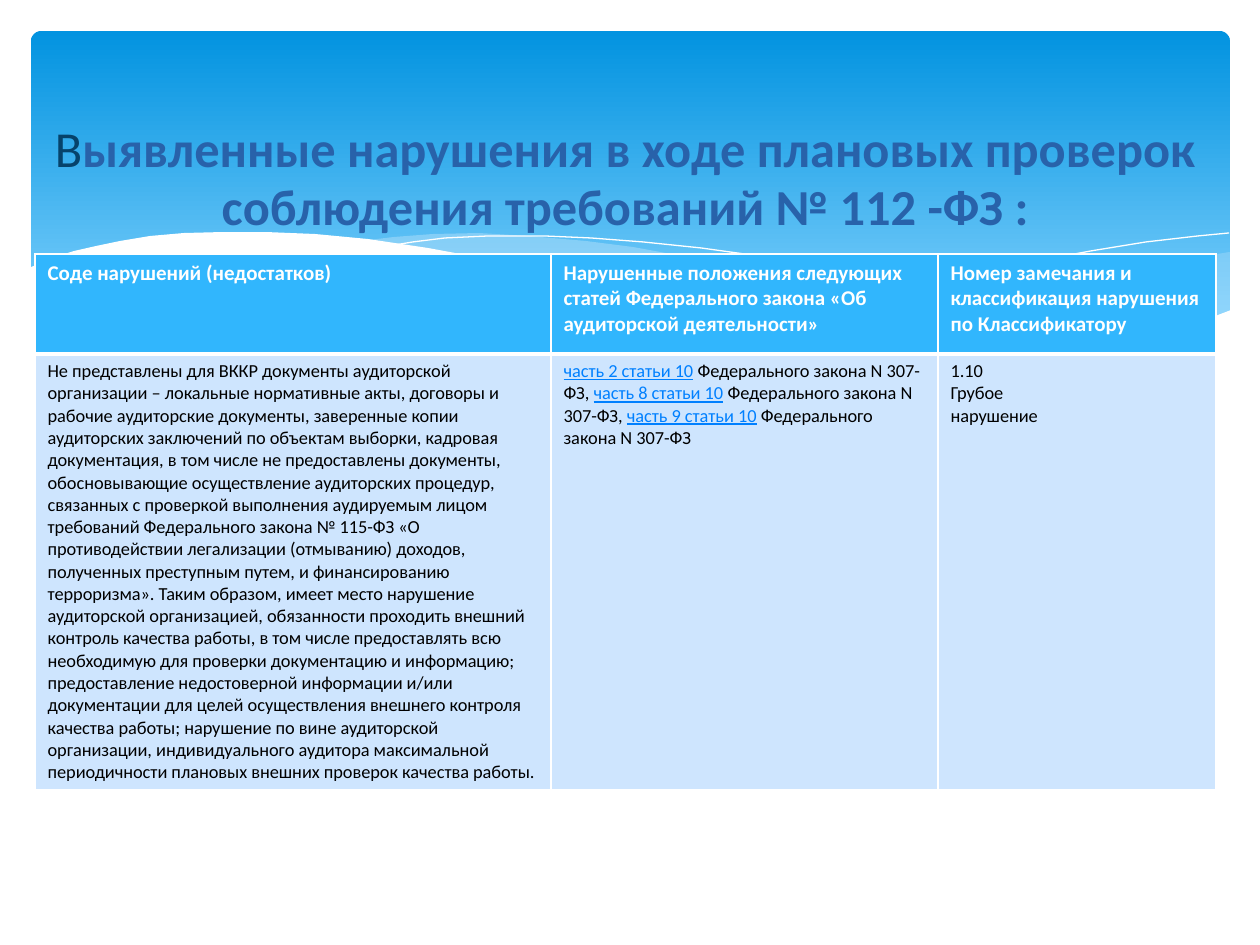
from lxml.etree import SubElement
from pptx import Presentation
from pptx.dml.color import RGBColor
from pptx.enum.shapes import MSO_SHAPE
from pptx.enum.text import MSO_ANCHOR, MSO_AUTO_SIZE, PP_ALIGN
from pptx.oxml import parse_xml
from pptx.oxml.ns import nsdecls, qn
from pptx.util import Emu, Pt

PX = 914400 / 126
COLORS = {
    "sky_top": "0293E0", "sky_bottom": "83D3FE", "wave": "C6E7FC", "white": "FFFFFF",
    "header": "31B6FD", "body": "CEE5FE", "text": "000000", "link": "0080FF",
    "title_initial": "06436B", "title": "2862AA",
}


def px(*lengths):
    """Turn px lengths into EMU."""
    return [Emu(round(length * PX)) for length in lengths]


def write(para, text, size, color="text", bold=False, underline=False):
    """Append a formatted span to a paragraph."""
    span = para.add_run()
    span.text = text
    span.font.name = "Calibri"
    span.font.size = Pt(size)
    span.font.bold = bold
    span.font.underline = underline
    span.font.color.rgb = RGBColor.from_string(COLORS[color])


deck = Presentation()
deck.slide_width, deck.slide_height = px(1260, 945)
page = deck.slides.add_slide(deck.slide_layouts[5])

# Gradient banner
banner = page.shapes.add_shape(MSO_SHAPE.ROUNDED_RECTANGLE, *px(31, 31, 1199, 341))
banner.adjustments[0] = 0.03
banner.shadow.inherit = False
banner.line.fill.background()
banner.fill.gradient()
banner.fill.gradient_angle = 270
for stop, position, color in zip(banner.fill.gradient_stops, (0, 0.9), ("sky_top", "sky_bottom")):
    stop.position = position
    stop.color.rgb = RGBColor.from_string(COLORS[color])

# Waves from back to front: fill colour (None for an open line), opacity in percent, points
waves = [
    ("wave", 29, [
        (1229, 252), (1178, 261), (1123, 272), (1085, 281), (1014, 299), (949, 312),
        (890, 324), (833, 334), (888, 341), (939, 346), (998, 349), (1052, 349),
        (1110, 344), (1160, 334), (1196, 324), (1230, 311), (1230, 252)]),
    ("wave", 40, [
        (1125, 344), (1055, 334), (976, 320), (890, 302), (793, 280), (736, 266),
        (682, 256), (633, 247), (586, 241), (529, 236), (479, 233), (433, 234),
        (394, 237), (360, 241), (407, 247), (456, 256), (509, 266), (566, 280),
        (668, 302), (757, 321), (838, 335), (910, 345), (989, 350), (1056, 350)]),
    (None, 100, [
        (389, 246), (413, 242), (445, 238), (488, 236), (545, 236), (591, 238),
        (643, 242), (701, 248), (766, 257), (838, 268), (916, 284), (1002, 304),
        (1095, 329), (1143, 343)]),
    (None, 100, [
        (772, 324), (823, 310), (876, 296), (942, 281), (1016, 265), (1091, 251),
        (1146, 242), (1198, 236), (1229, 233)]),
    ("white", 100, [
        (1231, 310), (1197, 323), (1159, 334), (1118, 342), (1071, 346), (1019, 349),
        (959, 347), (893, 341), (816, 330), (730, 315), (634, 294), (563, 277),
        (493, 260), (428, 248), (368, 239), (315, 234), (266, 232), (223, 232),
        (184, 233), (150, 236), (120, 241), (96, 246), (74, 251), (58, 256),
        (45, 261), (29, 268), (29, 415), (1231, 415)]),
]
for color, opacity, points in waves:
    builder = page.shapes.build_freeform(*points[0], scale=PX)
    builder.add_line_segments(points[1:], close=color is not None)
    wave = builder.convert_to_shape()
    wave.shadow.inherit = False
    if color is None:
        wave.fill.background()
        wave.line.color.rgb = RGBColor.from_string(COLORS["white"])
        wave.line.width = 0
        continue
    wave.line.fill.background()
    wave.fill.solid()
    wave.fill.fore_color.rgb = RGBColor.from_string(COLORS[color])
    if opacity < 100:
        shade = wave.element.spPr.find(qn("a:solidFill"))[0]
        SubElement(shade, qn("a:alpha")).set("val", str(opacity * 1000))

# Table of violations: each cell is a list of paragraphs, each paragraph a list of (text, colour)
law = " Федерального закона N 307-ФЗ"
missing_documents = (
    "Не представлены для ВККР документы аудиторской организации – локальные нормативные акты, "
    "договоры и рабочие аудиторские документы, заверенные копии аудиторских заключений по "
    "объектам выборки, кадровая документация, в том числе не предоставлены документы, "
    "обосновывающие осуществление аудиторских процедур, связанных с проверкой выполнения "
    "аудируемым лицом требований Федерального закона № 115-ФЗ «О противодействии легализации "
    "(отмыванию) доходов, полученных преступным путем, и финансированию терроризма». "
)
conclusion = (
    "Таким образом, имеет место нарушение аудиторской организацией, обязанности проходить внешний "
    "контроль качества работы, в том числе предоставлять всю необходимую для проверки "
    "документацию и информацию; предоставление недостоверной информации и/или документации для "
    "целей осуществления внешнего контроля качества работы; нарушение по вине аудиторской "
    "организации, индивидуального аудитора максимальной периодичности плановых внешних проверок "
    "качества работы."
)
headings = [
    "Соде нарушений (недостатков)",
    "Нарушенные положения следующих статей Федерального закона «Об аудиторской деятельности»",
    "Номер замечания и классификация нарушения по Классификатору",
]
articles = [
    ("часть 2 статьи 10", "link"), (law + ", ", "text"),
    ("часть 8 статьи 10", "link"), (law + ", ", "text"),
    ("часть 9 статьи 10", "link"), (law, "text"),
]
rows = [
    [[[(heading, "white")]] for heading in headings],
    [
        [[(missing_documents, "text"), (conclusion, "text")]],
        [articles],
        [[(line, "text")] for line in ("1.10", "Грубое", "нарушение")],
    ],
]
row_formats = [
    {"fill": "header", "size": 12, "bold": True, "borders": {"L": 1, "R": 1, "T": 1, "B": 3}},
    {"fill": "body", "size": 10.5, "bold": False, "borders": {"L": 1, "R": 1, "T": 3, "B": 1}},
]
table = page.shapes.add_table(2, 3, *px(35, 254, 1181, 535)).table
for column, width in zip(table.columns, px(516, 387, 278)):
    column.width = width
for row, height in zip(table.rows, px(100, 435)):
    row.height = height

for row, contents, style in zip(table.rows, rows, row_formats):
    for cell, paragraphs in zip(row.cells, contents):
        cell.fill.solid()
        cell.fill.fore_color.rgb = RGBColor.from_string(COLORS[style["fill"]])
        properties = cell._tc.get_or_add_tcPr()
        for index, (side, width) in enumerate(style["borders"].items()):
            properties.insert(index, parse_xml(
                f'<a:ln{side} {nsdecls("a")} w="{Pt(width)}"><a:solidFill>'
                f'<a:srgbClr val="{COLORS["white"]}"/></a:solidFill></a:ln{side}>'))
        for index, spans in enumerate(paragraphs):
            para = cell.text_frame.add_paragraph() if index else cell.text_frame.paragraphs[0]
            for text, color in spans:
                write(para, text, style["size"], color, style["bold"], color == "link")

# Title, in front of the banner and the waves
title = page.shapes.title
title.left, title.top, title.width, title.height = px(25, 51, 1201, 257)
title.element.getparent().append(title.element)
frame = title.text_frame
frame.word_wrap = True
frame.auto_size = MSO_AUTO_SIZE.NONE
frame.vertical_anchor = MSO_ANCHOR.MIDDLE
para = frame.paragraphs[0]
para.alignment = PP_ALIGN.CENTER
para.line_spacing = 0.96
write(para, "В", 28.8, "title_initial")
write(para, "ыявленные нарушения в ходе плановых проверок соблюдения требований № 112 -ФЗ :",
      28.8, "title", bold=True)

deck.save("out.pptx")
